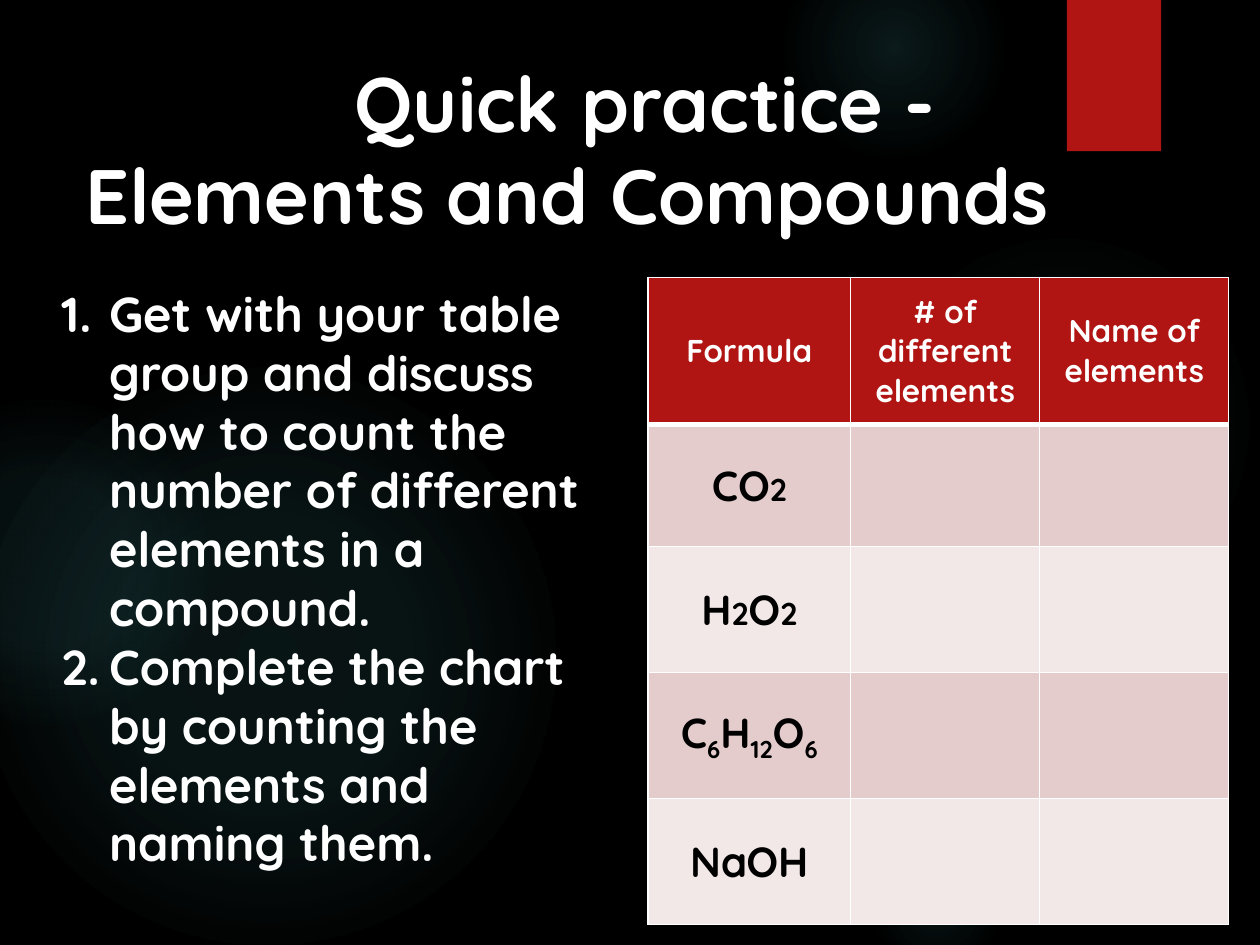
from dataclasses import dataclass

from lxml import etree
from pptx import Presentation
from pptx.dml.color import RGBColor
from pptx.enum import shapes, text
from pptx.oxml import ns
from pptx.util import Cm, Pt

FONT = "Quicksand"
COLORS = {
    "black": "000000",
    "white": "FFFFFF",
    "red": "B01513",
    "glow": "50B9C1",
    "dark_band": "E4CCCC",
    "light_band": "F2E8E7",
}


@dataclass
class Glow:
    left: float
    top: float
    size: float
    stops: list[tuple[int, int]]


@dataclass
class Span:
    text: str
    size: int = 24
    baseline: int = 0


GLOWS = [
    Glow(17.5, 4.65, 7.82, [(0, 7), (36, 6), (69, 0)]),
    Glow(15.8, -1.27, 4.45, [(0, 14), (36, 7), (73, 0)]),
    Glow(17.5, 16.94, 2.74, [(0, 9), (36, 5), (66, 0)]),
    Glow(-0.43, 7.42, 11.63, [(0, 11), (36, 10), (75, 0)]),
    Glow(-2.34, 8.05, 6.55, [(0, 8), (36, 8), (72, 0)]),
]
HEADINGS = ["Formula", "# of different elements", "Name of elements"]
FORMULAS = [
    [Span("CO"), Span("2", 18)],
    [Span("H"), Span("2", 18), Span("O"), Span("2", 18)],
    [Span("C"), Span("6", baseline=-25), Span("H"), Span("12", baseline=-25),
     Span("O"), Span("6", baseline=-25)],
    [Span("NaOH")],
]
STEPS = [
    "Get with your table group and discuss how to count the number of "
    "different elements in a compound.",
    "Complete the chart by counting the elements and naming them.",
]
COLUMN_WIDTHS = [4.09, 3.81, 3.81]
ROW_HEIGHTS = [2.97, 2.46, 2.54, 2.54, 2.54]


def color(name: str) -> RGBColor:
    return RGBColor.from_string(COLORS[name])


def add_node(parent, tag: str, **attributes):
    return etree.SubElement(parent, ns.qn(tag), attributes)


def style_span(span, size: int, ink: str) -> None:
    span.font.name = FONT
    span.font.size = Pt(size)
    span.font.bold = True
    span.font.color.rgb = color(ink)


def add_glow(page, glow: Glow) -> None:
    circle = page.shapes.add_shape(
        shapes.MSO_SHAPE.OVAL, Cm(glow.left), Cm(glow.top), Cm(glow.size), Cm(glow.size))
    gradient = add_node(circle._element.spPr, "a:gradFill", rotWithShape="1")
    stop_list = add_node(gradient, "a:gsLst")
    for position, opacity in glow.stops:
        stop = add_node(stop_list, "a:gs", pos=str(position * 1000))
        tint = add_node(stop, "a:srgbClr", val=COLORS["glow"])
        add_node(tint, "a:alpha", val=str(opacity * 1000))
    center = add_node(gradient, "a:path", path="circle")
    add_node(center, "a:fillToRect", l="50000", t="50000", r="50000", b="50000")
    circle.line.fill.background()
    circle.shadow.inherit = False


def add_ribbon(page) -> None:
    ribbon = page.shapes.add_shape(
        shapes.MSO_SHAPE.RECTANGLE, Cm(21.51), Cm(0), Cm(1.9), Cm(3.05))
    ribbon.fill.solid()
    ribbon.fill.fore_color.rgb = color("red")
    ribbon.line.fill.background()
    ribbon.shadow.inherit = False


def add_title(page) -> None:
    box = page.shapes.add_textbox(Cm(0.64), Cm(0.89), Cm(21.59), Cm(3.12))
    frame = box.text_frame
    frame.word_wrap = True
    frame.margin_top = Cm(0.23)
    frame.text = "Quick practice -\vElements and Compounds"
    para = frame.paragraphs[0]
    para.alignment = text.PP_ALIGN.CENTER
    para._p.get_or_add_pPr().set("indent", str(Cm(3.15)))
    for span in para.runs:
        style_span(span, 44, "white")


def add_steps(page) -> None:
    box = page.shapes.add_textbox(Cm(0.99), Cm(5.59), Cm(11.71), Cm(12.22))
    frame = box.text_frame
    frame.word_wrap = True
    frame.text = "\n".join(STEPS)
    for para in frame.paragraphs:
        properties = para._p.get_or_add_pPr()
        properties.set("marL", str(Cm(0.96)))
        properties.set("indent", str(Cm(-0.96)))
        add_node(properties, "a:buFont", typeface=FONT)
        add_node(properties, "a:buAutoNum", type="arabicPeriod")
        style_span(para.runs[0], 28, "white")


def style_cell(cell, fill: str, top: int = 1, bottom: int = 1) -> None:
    properties = cell._tc.get_or_add_tcPr()
    for side, width in {"L": 1, "R": 1, "T": top, "B": bottom}.items():
        edge = add_node(properties, f"a:ln{side}", w=str(Pt(width)))
        add_node(add_node(edge, "a:solidFill"), "a:srgbClr", val=COLORS["white"])
    cell.fill.solid()
    cell.fill.fore_color.rgb = color(fill)
    cell.vertical_anchor = text.MSO_ANCHOR.MIDDLE


def write_cell(cell, spans: list[Span], ink: str) -> None:
    para = cell.text_frame.paragraphs[0]
    para.alignment = text.PP_ALIGN.CENTER
    for part in spans:
        span = para.add_run()
        span.text = part.text
        style_span(span, part.size, ink)
        if part.baseline:
            span.font._element.set("baseline", str(part.baseline * 1000))


def add_formula_table(page) -> None:
    table = page.shapes.add_table(
        len(ROW_HEIGHTS), len(COLUMN_WIDTHS), Cm(13.06), Cm(5.59),
        Cm(sum(COLUMN_WIDTHS)), Cm(sum(ROW_HEIGHTS))).table
    for column, width in zip(table.columns, COLUMN_WIDTHS):
        column.width = Cm(width)
    for row, height in zip(table.rows, ROW_HEIGHTS):
        row.height = Cm(height)
    for cell, heading in zip(table.rows[0].cells, HEADINGS):
        style_cell(cell, "red", bottom=3)
        write_cell(cell, [Span(heading, 18)], "white")
    for index, formula in enumerate(FORMULAS, start=1):
        band = "dark_band" if index % 2 else "light_band"
        for cell in table.rows[index].cells:
            style_cell(cell, band, top=3 if index == 1 else 1)
        write_cell(table.cell(index, 0), formula, "black")


def main() -> None:
    deck = Presentation()
    deck.slide_width, deck.slide_height = Cm(25.4), Cm(19.05)
    page = deck.slides.add_slide(deck.slide_layouts[6])
    page.background.fill.solid()
    page.background.fill.fore_color.rgb = color("black")
    for glow in GLOWS:
        add_glow(page, glow)
    add_ribbon(page)
    add_title(page)
    add_formula_table(page)
    add_steps(page)
    deck.save("out.pptx")


if __name__ == "__main__":
    main()
